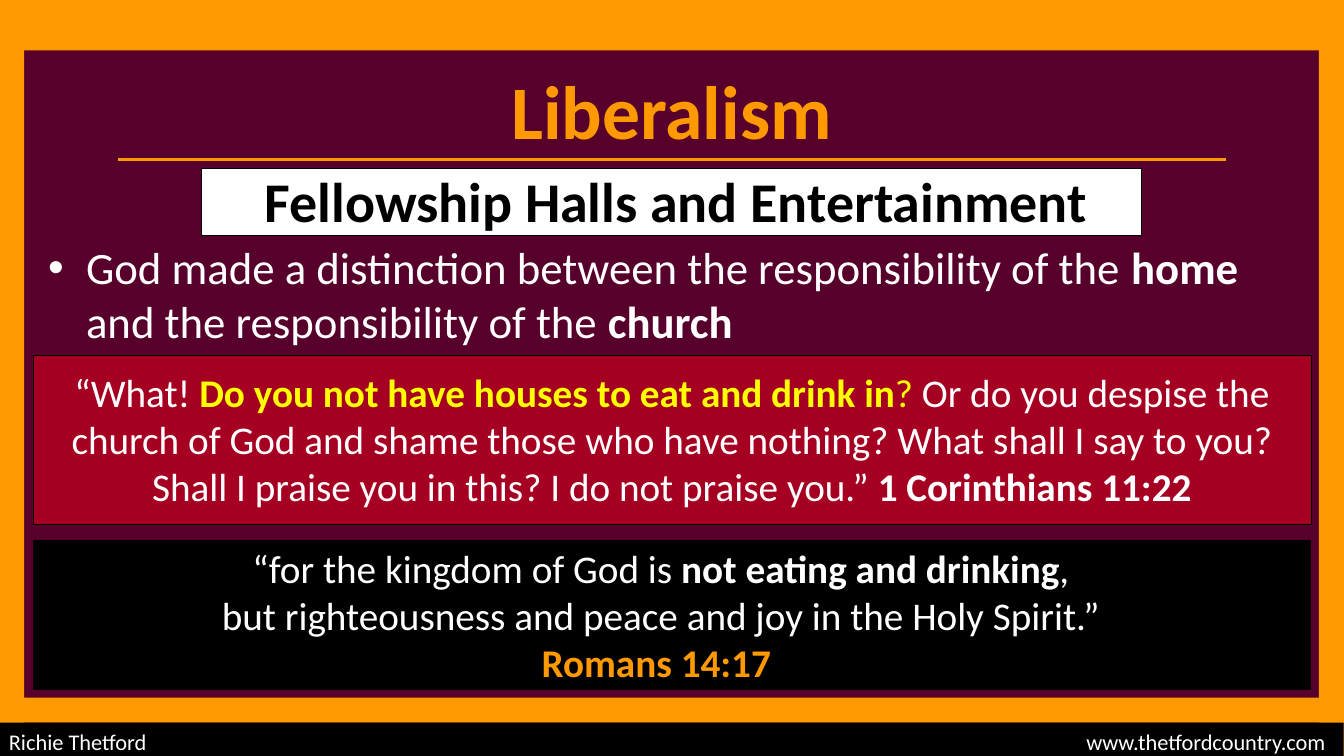
from lxml.etree import SubElement
from pptx import Presentation
from pptx.dml.color import RGBColor
from pptx.enum.shapes import MSO_CONNECTOR, MSO_SHAPE
from pptx.enum.text import MSO_ANCHOR, PP_ALIGN
from pptx.oxml.ns import qn
from pptx.util import Pt

COLORS = {"wine": "58002C", "orange": "FF9900", "red": "A50021",
          "black": "000000", "white": "FFFFFF", "yellow": "FFFF00"}
FONT = "Calibri"
WIDTH, HEIGHT = 960, 540

# Each piece of text: wording, colour, bold. "\n" breaks the line.
TITLE = [("Liberalism", "orange", True)]
SUBTITLE = [("Fellowship Halls and Entertainment", "black", True)]
POINT = [
    ("God made a distinction between the responsibility of the ", "white", False),
    ("home", "white", True),
    (" and the responsibility of the ", "white", False),
    ("church", "white", True),
]
CORINTHIANS = [
    ("“What! ", "white", False),
    ("Do you not have houses to eat and drink in", "yellow", True),
    ("? ", "yellow", False),
    ("Or do you despise the church of God and shame those who have nothing? "
     "What shall I say to you? Shall I praise you in this? "
     "I do not praise you.” ", "white", False),
    ("1 Corinthians 11:22", "white", True),
]
ROMANS = [
    ("“for the kingdom of God is ", "white", False),
    ("not eating and drinking", "white", True),
    (",", "white", False),
    ("\n", "white", False),
    ("but righteousness and peace and joy in the Holy Spirit.”", "white", False),
    ("\n", "white", False),
    ("Romans 14:17 ", "orange", True),
]
FOOTER = [("Richie Thetford\twww.thetfordcountry.com", "white", False)]

# Boxes: left, top, width, height
PANELS = [
    ((23.76, 254.16, 912.96, 120.24), "red"),
    ((23.76, 385.92, 912.24, 106.56), "black"),
    ((144, 120.24, 671.76, 48.24), "white"),
]
BORDER = 18
FRAME = [
    (-0.72, 0, BORDER, HEIGHT),
    (WIDTH - BORDER, 0, BORDER, HEIGHT),
    (10, 0, 937.5, 2 * BORDER),
    (10, 498.24, 943.2, BORDER),
]
FOOTER_BOX = (-0.72, 516.24, 960.5, 26.64)
FOOTER_TAB = 940.5
TEXTS = [
    ((149.76, 115.2, 666, 55.44), SUBTITLE, 40),
    ((23.76, 259.2, 912.24, 108.72), CORINTHIANS, 28),
    ((33.12, 385.2, 877.68, 108.72), ROMANS, 28),
]
POINT_BOX = (27.36, 167.76, 908.64, 88.56)
TITLE_BOX = (144, 41.76, 671.76, 72)
RULE = (84.24, 113.76, 875.52, 113.76)


def color(name):
    return RGBColor.from_string(COLORS[name])


def points(values):
    return [Pt(value) for value in values]


def add_panel(slide, box, fill, outlined=False):
    shape = slide.shapes.add_shape(MSO_SHAPE.RECTANGLE, *points(box))
    shape.shadow.inherit = False
    shape.fill.solid()
    shape.fill.fore_color.rgb = color(fill)
    if outlined:
        shape.line.color.rgb = color("black")
        shape.line.width = Pt(0.75)
    else:
        shape.line.fill.background()
    return shape


def write(shape, pieces, size, align=PP_ALIGN.CENTER, anchor=MSO_ANCHOR.TOP):
    """Fill the shape with one paragraph of styled pieces and return it."""
    frame = shape.text_frame
    frame.word_wrap = True
    frame.vertical_anchor = anchor
    paragraph = frame.paragraphs[0]
    paragraph.alignment = align
    for text, tint, bold in pieces:
        if text == "\n":
            paragraph.add_line_break()
            continue
        run = paragraph.add_run()
        run.text = text
        run.font.name, run.font.size, run.font.bold = FONT, Pt(size), bold
        run.font.color.rgb = color(tint)
    return paragraph


def add_text(slide, box, pieces, size, align=PP_ALIGN.CENTER):
    return write(slide.shapes.add_textbox(*points(box)), pieces, size, align)


def add_text_shadow(paragraph, tint):
    for run in paragraph.runs:
        properties = run.font._element
        effects = properties.makeelement(qn("a:effectLst"), {})
        properties.find(qn("a:solidFill")).addnext(effects)
        shadow = SubElement(effects, qn("a:outerShdw"),
                            dist=str(Pt(2.8)), dir="2700000", algn="tl")
        SubElement(shadow, qn("a:srgbClr"), val=COLORS[tint])


def add_bullet(paragraph, indent):
    properties = paragraph._p.get_or_add_pPr()
    properties.set("marL", str(Pt(indent)))
    properties.set("indent", str(-Pt(indent)))
    SubElement(properties, qn("a:buFont"), typeface="Arial")
    SubElement(properties, qn("a:buChar"), char="•")


def add_right_tab(paragraph, position):
    tabs = SubElement(paragraph._p.get_or_add_pPr(), qn("a:tabLst"))
    SubElement(tabs, qn("a:tab"), pos=str(Pt(position)), algn="r")


def main():
    presentation = Presentation()
    presentation.slide_width, presentation.slide_height = Pt(WIDTH), Pt(HEIGHT)
    slide = presentation.slides.add_slide(presentation.slide_layouts[5])
    slide.background.fill.solid()
    slide.background.fill.fore_color.rgb = color("wine")

    title = slide.shapes.title
    title.left, title.top, title.width, title.height = points(TITLE_BOX)
    add_text_shadow(write(title, TITLE, 54, anchor=MSO_ANCHOR.MIDDLE), "black")

    for box, fill in PANELS:
        add_panel(slide, box, fill, outlined=True)
    for box in FRAME:
        add_panel(slide, box, "orange")

    rule = slide.shapes.add_connector(MSO_CONNECTOR.STRAIGHT, *points(RULE))
    rule.line.color.rgb = color("orange")
    rule.line.width = Pt(2)
    SubElement(rule._element.spPr, qn("a:effectLst"))

    point = add_text(slide, POINT_BOX, POINT, 32, PP_ALIGN.LEFT)
    add_bullet(point, 27)
    for box, pieces, size in TEXTS:
        paragraph = add_text(slide, box, pieces, size)
        if pieces is SUBTITLE:
            add_text_shadow(paragraph, "orange")

    footer = add_panel(slide, FOOTER_BOX, "black")
    add_right_tab(write(footer, FOOTER, 16, PP_ALIGN.LEFT), FOOTER_TAB)

    presentation.save("out.pptx")


if __name__ == "__main__":
    main()
